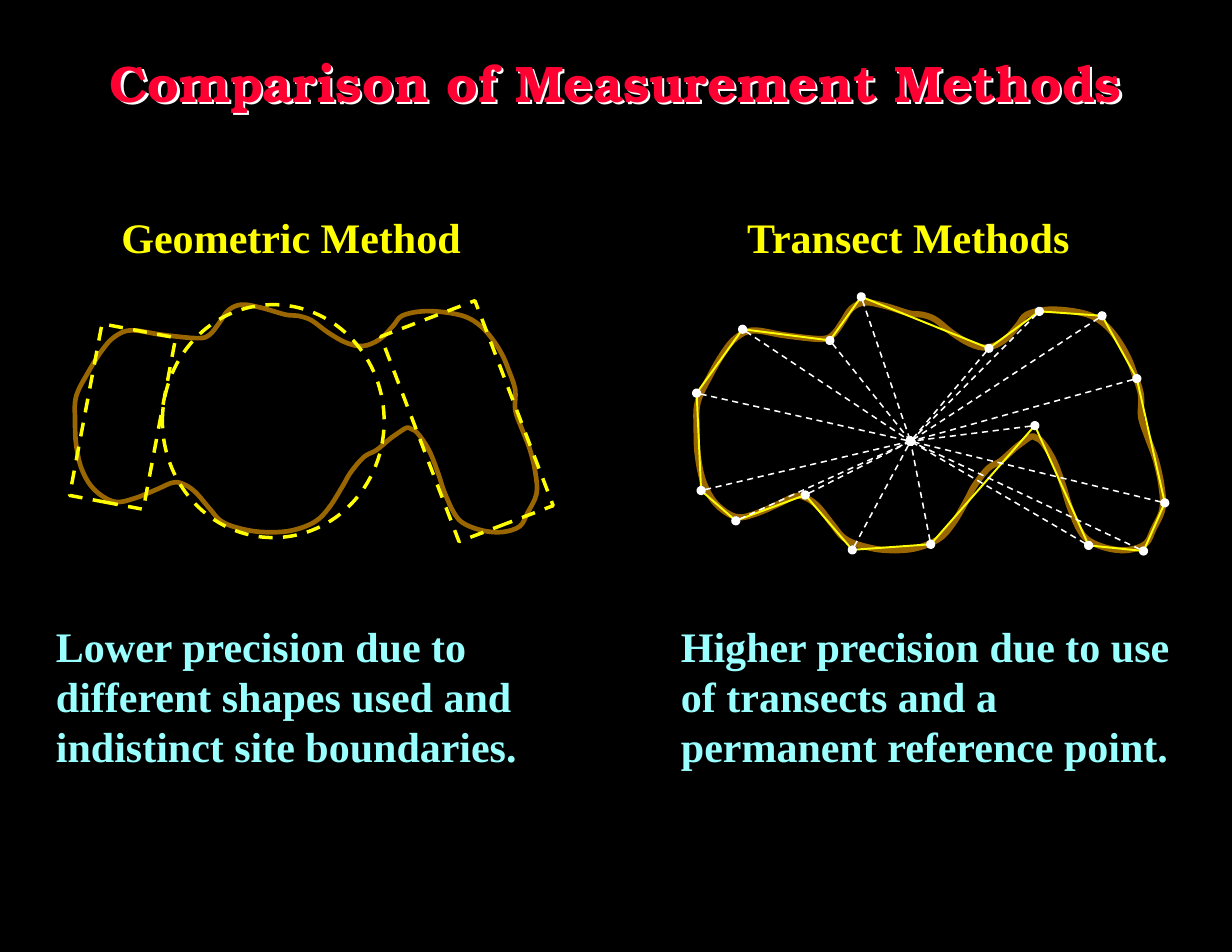
from lxml import etree
from pptx import Presentation
from pptx.dml.color import RGBColor
from pptx.enum.dml import MSO_LINE
from pptx.enum.shapes import MSO_CONNECTOR, MSO_SHAPE
from pptx.enum.text import MSO_ANCHOR, PP_ALIGN
from pptx.oxml import parse_xml
from pptx.oxml.ns import nsdecls, qn
from pptx.util import Pt

PX = 9144  # 100 px to the inch
DASH = MSO_LINE.DASH
LEFT, CENTER = PP_ALIGN.LEFT, PP_ALIGN.CENTER
RECT, OVAL = MSO_SHAPE.RECTANGLE, MSO_SHAPE.OVAL
LINE = MSO_CONNECTOR.STRAIGHT
SERIF, SLAB = "Times New Roman", "TeX Gyre Bonum"
YELLOW, BROWN, WHITE = "FFFF00", "996600", "FFFFFF"
CYAN, RED, BLACK = "99FFFF", "FF0033", "000000"

# Content
TITLE = "Comparison of Measurement Methods"
# box, alignment, wrap, hanging indent, colour, paragraphs
TEXTS = [
    ((97, 183, 326, 56), CENTER, False, 0, YELLOW, ["Geometric Method"]),
    ((629, 183, 364, 56), CENTER, True, 0, YELLOW, ["Transect Methods"]),
    ((39, 548, 434, 146), LEFT, False, 42, CYAN,
     ["Lower precision due to", "different shapes used and",
      "indistinct site boundaries."]),
    ((597, 548, 465, 146), LEFT, True, 0, CYAN,
     ["Higher precision due to use of transects and a "
      "permanent reference point."]),
]

# Site boundary: points of a closed smooth curve
SITE = [
    (117, 295), (145, 299), (176, 302), (187, 299), (196, 288), (204, 277),
    (216, 272), (234, 275), (255, 281), (266, 282), (278, 286), (293, 297),
    (309, 306), (324, 309), (339, 303), (351, 291), (359, 282), (377, 278),
    (398, 279), (416, 283), (429, 291), (439, 302), (448, 316), (454, 330),
    (460, 348), (460, 366), (466, 383), (473, 401), (478, 422), (479, 441),
    (471, 458), (464, 470), (449, 475), (432, 474), (415, 468), (406, 459),
    (397, 440), (391, 422), (383, 402), (373, 387), (367, 383), (363, 382),
    (355, 387), (348, 392), (336, 402), (325, 408), (313, 422), (306, 434),
    (294, 453), (281, 466), (259, 474), (233, 475), (211, 471), (197, 465),
    (187, 454), (174, 439), (163, 432), (154, 431), (140, 437), (120, 445),
    (102, 448), (84, 437), (73, 419), (68, 397), (67, 376), (68, 354),
    (79, 332), (91, 313), (102, 301),
]
SITE_BOX = (66, 272, 414, 203)
COPY_BOX = (621, 270, 418, 221)

# Shapes fitted to the site: kind, box, rotation
FITS = [
    (RECT, (372, 278, 90, 196), 339.1),
    (OVAL, (145, 272, 198, 208), 0),
    (RECT, (76, 294, 67, 156), 10.7),
]

# Reference point and the ends of its transects
HUB = (813, 394)
ENDS = [
    (663, 294), (741, 304), (769, 265), (883, 311), (928, 278), (984, 282),
    (1015, 338), (1040, 449), (1021, 492), (972, 487), (924, 380),
    (831, 486), (761, 491), (719, 442), (657, 465), (626, 438), (622, 351),
]


def emu(nums):
    return [round(n * PX) for n in nums]


def rgb(code):
    return RGBColor.from_string(code)


def stroke(shape, color, width, dash=None):
    shape.line.color.rgb = rgb(color)
    shape.line.width = Pt(width)
    if dash:
        shape.line.dash_style = dash


def hollow(shape):
    shape.fill.background()
    shape.shadow.inherit = False


def write(para, text, font, size, color):
    run = para.add_run()
    run.text = text
    run.font.name = font
    run.font.size = Pt(size)
    run.font.bold = True
    run.font.color.rgb = rgb(color)


def pad(frame):
    frame.margin_left = frame.margin_right = 11 * PX
    frame.margin_top = frame.margin_bottom = 6 * PX


def outline(shapes, pts):
    pts = [emu(p) for p in pts]
    build = shapes.build_freeform(*pts[0], scale=1.0)
    build.add_line_segments(pts[1:] + pts[:1], close=True)
    shape = build.convert_to_shape()
    hollow(shape)
    return shape


def smooth(shape):
    """Turn each straight side into a curve tangent to its neighbours."""
    sides = shape._element.findall(".//" + qn("a:lnTo"))
    ends = [(int(s[0].get("x")), int(s[0].get("y"))) for s in sides]
    count = len(ends)
    for i, side in enumerate(sides):
        a, b, c, d = (ends[(i + k) % count] for k in (-2, -1, 0, 1))
        out = [q + (r - p) / 6 for p, q, r in zip(a, b, c)]
        into = [q - (r - p) / 6 for p, q, r in zip(b, c, d)]
        side.tag = qn("a:cubicBezTo")
        side.remove(side[0])
        for x, y in (out, into, c):
            etree.SubElement(side, qn("a:pt"), x=str(round(x)), y=str(round(y)))


def refit(pts, old, new):
    return [tuple(n + (v - o) * ns / os_ for v, o, os_, n, ns
                  in zip(p, old[:2], old[2:], new[:2], new[2:]))
            for p in pts]


prs = Presentation()
prs.slide_width, prs.slide_height = emu((1100, 850))
slide = prs.slides.add_slide(prs.slide_layouts[5])
slide.background.fill.solid()
slide.background.fill.fore_color.rgb = rgb(BLACK)
shapes = slide.shapes

# Title with a white text shadow
title = shapes.title
title.left, title.top, title.width, title.height = emu((55, 7, 990, 132))
frame = title.text_frame
pad(frame)
frame.vertical_anchor = MSO_ANCHOR.MIDDLE
frame.paragraphs[0].alignment = CENTER
write(frame.paragraphs[0], TITLE, SLAB, 33, RED)
title.fill.background()
title._element.spPr.append(parse_xml(
    f'<a:effectLst {nsdecls("a")}><a:outerShdw dist="25400" dir="2700000">'
    f'<a:srgbClr val="{WHITE}"/></a:outerShdw></a:effectLst>'))

# Geometric method
site = outline(shapes, SITE)
smooth(site)
stroke(site, BROWN, 3)
for kind, box, turn in FITS:
    fit = shapes.add_shape(kind, *emu(box))
    fit.rotation = turn
    hollow(fit)
    stroke(fit, YELLOW, 2.25, DASH)

# Transect method
site = outline(shapes, refit(SITE, SITE_BOX, COPY_BOX))
smooth(site)
stroke(site, BROWN, 4)
stroke(outline(shapes, ENDS), YELLOW, 1.25)
for end in ENDS:
    ray = shapes.add_connector(LINE, *emu(end + HUB))
    stroke(ray, WHITE, 1, DASH)
    line = ray.line._get_or_add_ln()
    for tip in ("a:headEnd", "a:tailEnd"):
        etree.SubElement(line, qn(tip), type="oval")
    etree.SubElement(ray._element.spPr, qn("a:effectLst"))

# Headings and remarks
for box, align, wrap, hang, color, lines in TEXTS:
    frame = shapes.add_textbox(*emu(box)).text_frame
    frame.word_wrap = wrap
    pad(frame)
    for i, text in enumerate(lines):
        para = frame.add_paragraph() if i else frame.paragraphs[0]
        para.alignment = align
        para.line_spacing = Pt(32.3)
        if hang:
            props = para._p.get_or_add_pPr()
            props.set("marL", str(hang * PX))
            props.set("indent", str(-hang * PX))
        write(para, text, SERIF, 27, color)

prs.save("out.pptx")
